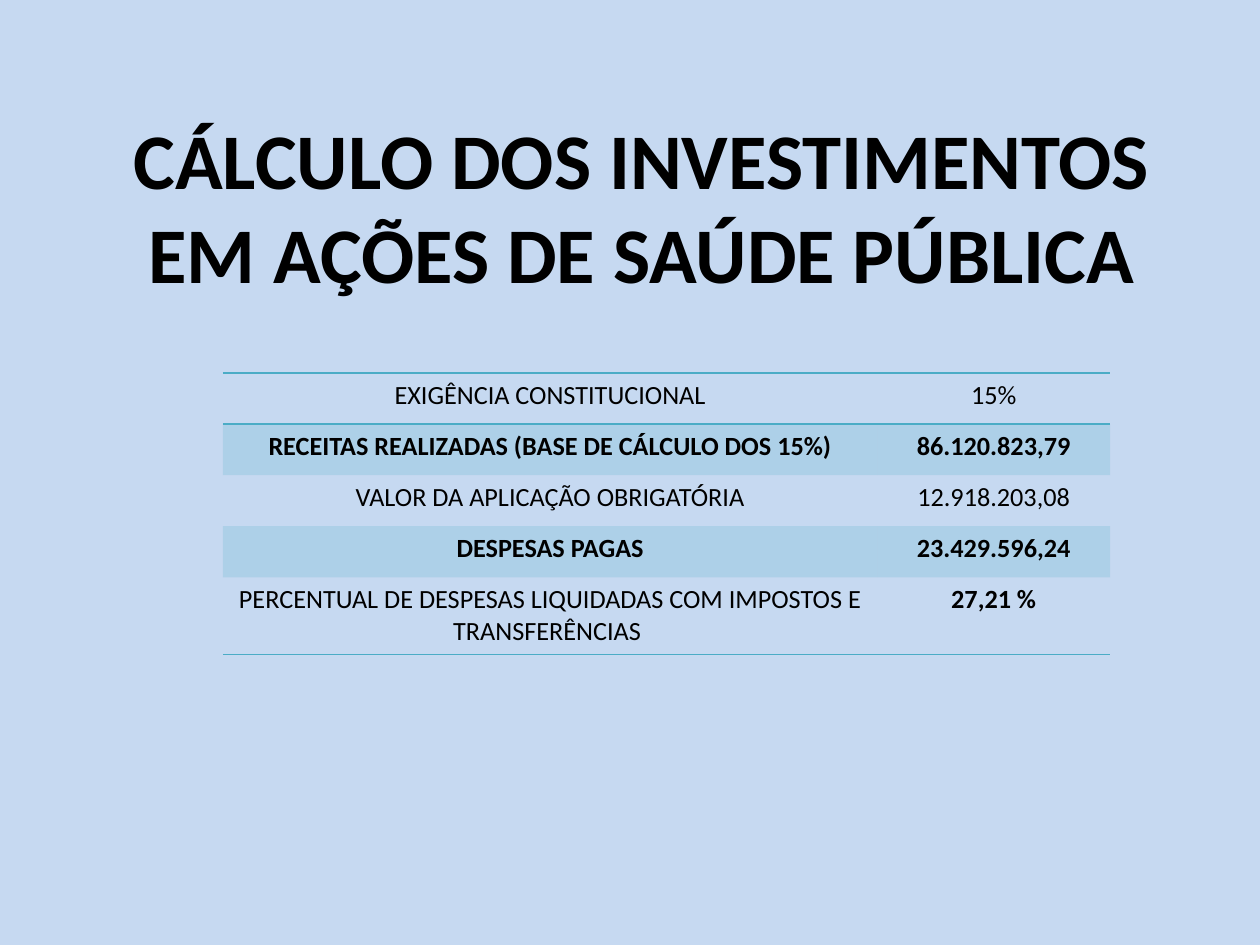
from pptx import Presentation
from pptx.dml.color import RGBColor
from pptx.enum.text import MSO_ANCHOR, MSO_AUTO_SIZE, PP_ALIGN
from pptx.oxml import parse_xml
from pptx.oxml.ns import nsdecls, qn
from pptx.util import Pt
from lxml.etree import SubElement

# Content
TITLE = "CÁLCULO DOS INVESTIMENTOS EM AÇÕES DE SAÚDE PÚBLICA"
ROWS = [  # label, value, label bold, value bold
    ("EXIGÊNCIA CONSTITUCIONAL", "15%", False, False),
    ("RECEITAS REALIZADAS (BASE DE CÁLCULO DOS 15%)", "86.120.823,79", True, True),
    ("VALOR DA APLICAÇÃO OBRIGATÓRIA", "12.918.203,08", False, False),
    ("DESPESAS PAGAS", "23.429.596,24", True, True),
    ("PERCENTUAL DE DESPESAS LIQUIDADAS COM IMPOSTOS E TRANSFERÊNCIAS ", "27,21 %", False, True),
]

# Format
BACKGROUND, ACCENT, BLACK = "C6D9F1", "4BACC6", "000000"
COL_WIDTHS = (374, 133)
ROW_HEIGHT, LAST_HEIGHT = 29.2, 43.8
NO_STYLE = "{2D5ABB26-0587-4C30-8999-92F81FD0307C}"


def rgb(code):
    return RGBColor.from_string(code)


def write(tf, text, size, bold):
    p = tf.paragraphs[0]
    p.alignment = PP_ALIGN.CENTER
    r = p.add_run()
    r.text = text
    for name, value in dict(name="Calibri", size=Pt(size), bold=bold).items():
        setattr(r.font, name, value)
    r.font.color.rgb = rgb(BLACK)


def shade(cell, opacity):
    cell.fill.solid()
    cell.fill.fore_color.rgb = rgb(ACCENT)
    clr = next(cell._tc.tcPr.iter(qn("a:srgbClr")))
    SubElement(clr, qn("a:alpha")).set("val", str(opacity * 1000))


def add_borders(cell, sides):
    for i, side in enumerate(sides):
        cell._tc.tcPr.insert(i, parse_xml(
            f'<a:ln{side} {nsdecls("a")} w="{Pt(1)}"><a:solidFill>'
            f'<a:srgbClr val="{ACCENT}"/></a:solidFill></a:ln{side}>'))


prs = Presentation()
prs.slide_width, prs.slide_height = Pt(720), Pt(540)
s = prs.slides.add_slide(prs.slide_layouts[5])
s.background.fill.solid()
s.background.fill.fore_color.rgb = rgb(BACKGROUND)

# Title
title = s.shapes.title
title.left, title.top, title.width, title.height = Pt(42.5), Pt(54.7), Pt(648), Pt(124.6)
tf = title.text_frame
for name, value in dict(word_wrap=True, auto_size=MSO_AUTO_SIZE.NONE,
                        vertical_anchor=MSO_ANCHOR.MIDDLE).items():
    setattr(tf, name, value)
write(tf, TITLE, 45, True)

# Table: every second row is shaded
last = len(ROWS) - 1
frame = s.shapes.add_table(len(ROWS), len(COL_WIDTHS), Pt(127.4), Pt(213.1),
                           Pt(sum(COL_WIDTHS)), Pt(ROW_HEIGHT * last + LAST_HEIGHT))
table = frame.table
table.first_row = table.horz_banding = False
table._tbl.tblPr.find(qn("a:tableStyleId")).text = NO_STYLE
for col, width in zip(table.columns, COL_WIDTHS):
    col.width = Pt(width)

BORDERS = {0: "TB", last: "B"}
for i, (label, value, label_bold, value_bold) in enumerate(ROWS):
    table.rows[i].height = Pt(LAST_HEIGHT if i == last else ROW_HEIGHT)
    for j, (text, bold) in enumerate([(label, label_bold), (value, value_bold)]):
        cell = table.cell(i, j)
        write(cell.text_frame, text, 15, bold)
        if i % 2:
            shade(cell, 20)
        else:
            cell.fill.background()
        add_borders(cell, BORDERS.get(i, ""))

prs.save("out.pptx")
